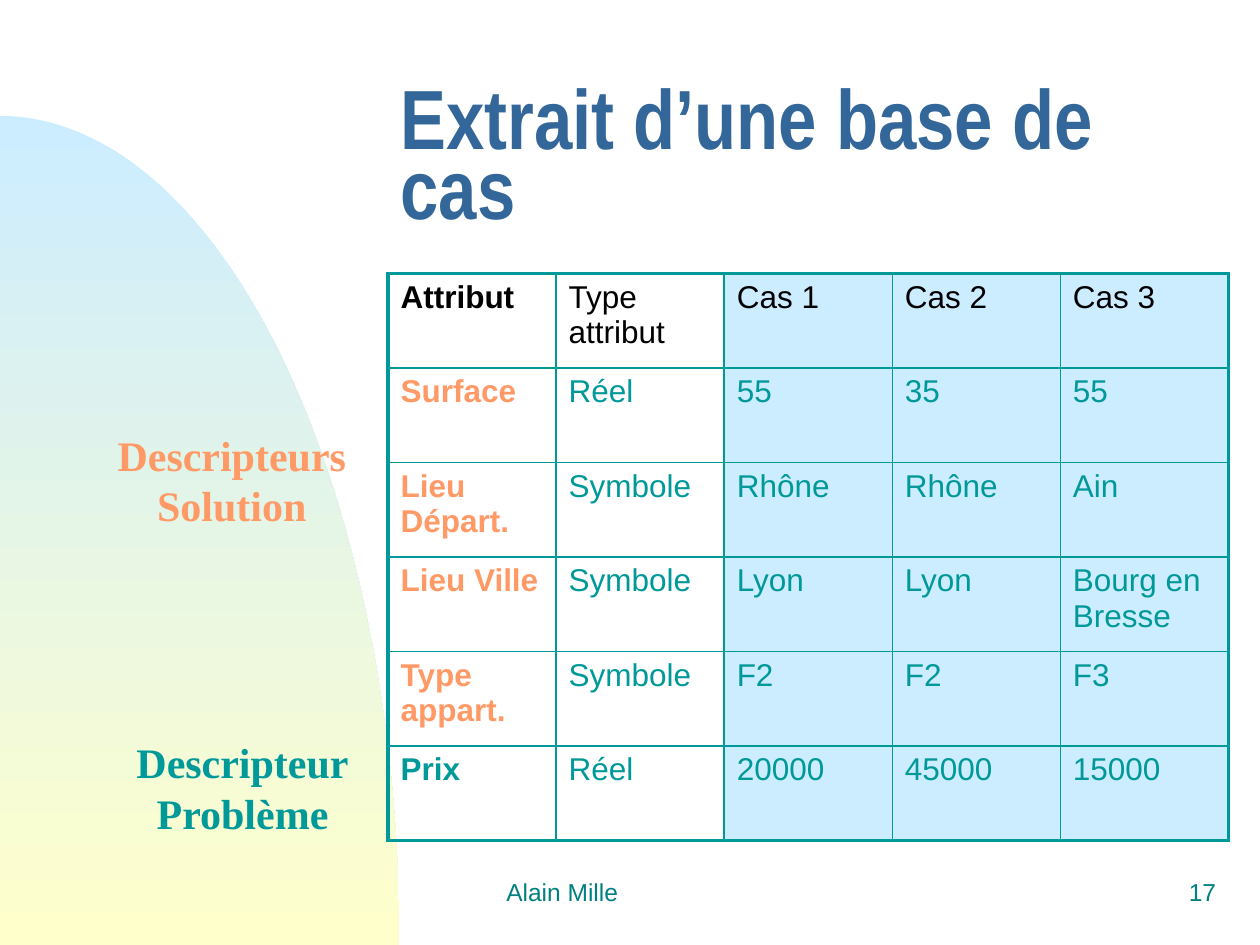
"""Build the slide showing an extract of a case base."""
from math import cos, pi, sin

from lxml.etree import SubElement
from pptx import Presentation
from pptx.dml.color import RGBColor
from pptx.enum.text import MSO_ANCHOR, PP_ALIGN
from pptx.oxml.ns import qn
from pptx.util import Inches, Pt

TEAL = RGBColor(0x00, 0x99, 0x99)
DARK_TEAL = RGBColor(0x00, 0x80, 0x80)
ORANGE = RGBColor(0xFF, 0x99, 0x66)
BLUE = RGBColor(0x33, 0x66, 0x99)
BLACK = RGBColor(0x01, 0x00, 0x00)
SKY = RGBColor(0xCC, 0xEC, 0xFF)
CREAM = RGBColor(0xFF, 0xFF, 0xCC)


def add_run(paragraph, text, size, font, color, bold=False):
    run = paragraph.add_run()
    run.text = text
    run.font.size = Pt(size)
    run.font.name = font
    run.font.color.rgb = color
    run.font.bold = bold


def add_label(box, lines, size, font, color, bold, align, anchor, wrap):
    frame = slide.shapes.add_textbox(*map(Inches, box)).text_frame
    frame.word_wrap = wrap
    frame.vertical_anchor = anchor
    for index, line in enumerate(lines):
        paragraph = frame.add_paragraph() if index else frame.paragraphs[0]
        paragraph.alignment = align
        add_run(paragraph, line, size, font, color, bold)
    return frame


presentation = Presentation()
presentation.slide_width = Inches(10)
presentation.slide_height = Inches(7.5)
slide = presentation.slides.add_slide(presentation.slide_layouts[6])

steps = 90
arc = [
    (Inches(3.17 * sin(pi / 2 * step / steps)), Inches(7.5 - 6.58 * cos(pi / 2 * step / steps)))
    for step in range(steps + 1)
]
builder = slide.shapes.build_freeform(*arc[0])
builder.add_line_segments(arc[1:] + [(0, Inches(7.5))], close=True)
hill = builder.convert_to_shape()
hill.shadow.inherit = False
hill.line.fill.background()
hill.fill.gradient()
hill.fill.gradient_angle = 270
for stop, color in zip(hill.fill.gradient_stops, (SKY, CREAM)):
    stop.color.rgb = color

MIDDLE, TOP = MSO_ANCHOR.MIDDLE, MSO_ANCHOR.TOP
LEFT, CENTER, RIGHT = PP_ALIGN.LEFT, PP_ALIGN.CENTER, PP_ALIGN.RIGHT
add_label((3.92, 6.83, 3.17, 0.5), ["Alain Mille"], 14, "Arial", DARK_TEAL, False, LEFT, MIDDLE, True)
add_label((7.67, 6.83, 2.08, 0.5), ["17"], 14, "Arial", DARK_TEAL, False, RIGHT, MIDDLE, True)
title = add_label((3.08, 0.67, 6.67, 1.25), ["Extrait d’une base de cas"],
                  48, "Arial Narrow", BLUE, True, LEFT, MIDDLE, True)
title.paragraphs[0].line_spacing = 0.7

cases = [
    ["Attribut", "Type attribut", "Cas 1", "Cas 2", "Cas 3"],
    ["Surface", "Réel", "55", "35", "55"],
    ["Lieu Départ.", "Symbole", "Rhône", "Rhône", "Ain"],
    ["Lieu Ville", "Symbole", "Lyon", "Lyon", "Bourg en Bresse"],
    ["Type appart.", "Symbole", "F2", "F2", "F3"],
    ["Prix", "Réel", "20000", "45000", "15000"],
]
last_row, last_column = len(cases) - 1, len(cases[0]) - 1
case_table = slide.shapes.add_table(
    len(cases), len(cases[0]), Inches(3.08), Inches(2.17), Inches(6.67), Inches(4.5)
).table
case_table.first_row = False
case_table.horz_banding = False

for row, values in enumerate(cases):
    for column, value in enumerate(values):
        cell = case_table.cell(row, column)
        outer_edges = {
            "a:lnL": column == 0,
            "a:lnR": column == last_column,
            "a:lnT": row == 0,
            "a:lnB": row == last_row,
        }
        properties = cell._tc.get_or_add_tcPr()
        for tag, is_outer in outer_edges.items():
            border = SubElement(properties, qn(tag), w=str(Pt(2.25 if is_outer else 1)))
            border_fill = SubElement(border, qn("a:solidFill"))
            SubElement(border_fill, qn("a:srgbClr"), val=str(TEAL))
        if column >= 2:
            cell.fill.solid()
            cell.fill.fore_color.rgb = SKY
        else:
            cell.fill.background()
        if row == 0:
            color = BLACK
        elif column == 0 and row < last_row:
            color = ORANGE
        else:
            color = TEAL
        paragraph = cell.text_frame.paragraphs[0]
        paragraph.space_before = Pt(3.6)
        add_run(paragraph, value, 18, "Arial", color, column == 0)

for box, lines, color in [
    ((0.98, 5.8, 1.89, 0.9), ["Descripteur", "Problème"], TEAL),
    ((0.83, 3.36, 2.02, 0.9), ["Descripteurs", "Solution"], ORANGE),
]:
    add_label(box, lines, 24, "Times New Roman", color, True, CENTER, TOP, False)

presentation.save("out.pptx")
